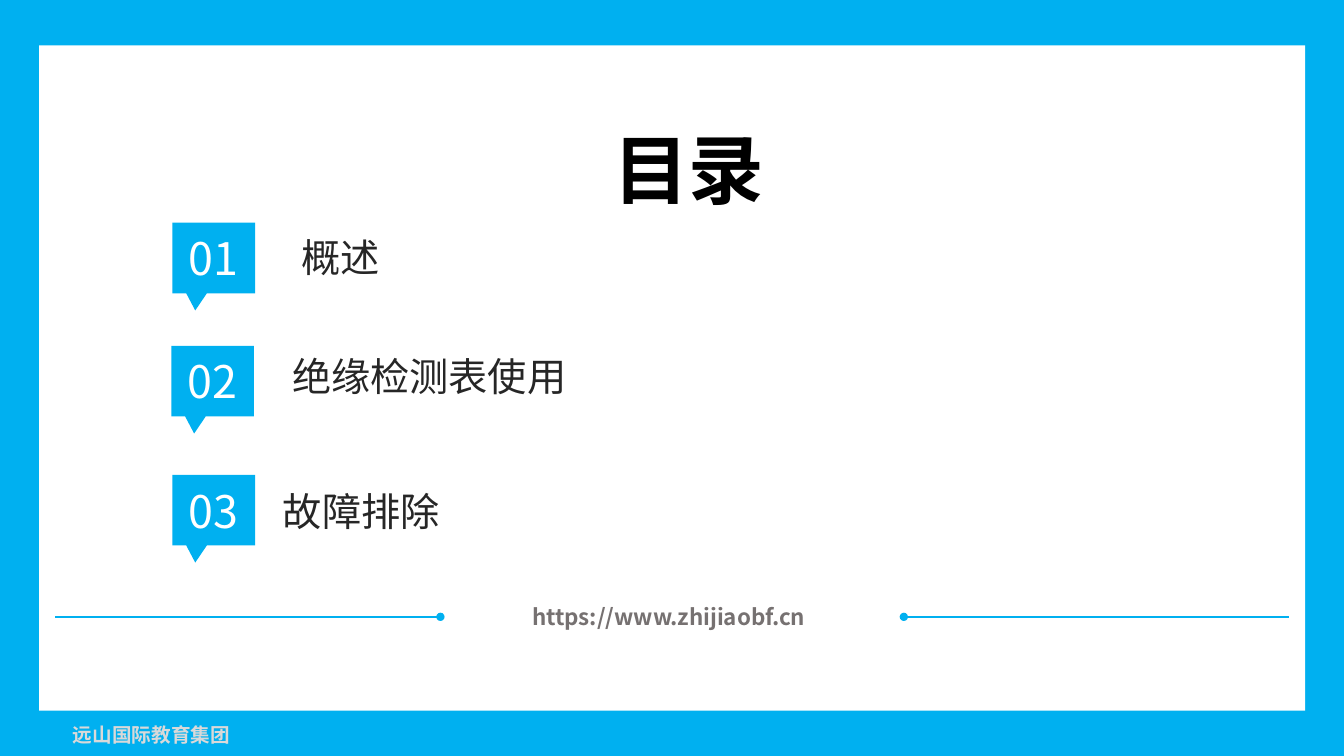
from dataclasses import dataclass

from lxml.etree import SubElement
from pptx import Presentation
from pptx.dml.color import RGBColor
from pptx.enum.shapes import MSO_CONNECTOR, MSO_SHAPE
from pptx.enum.text import MSO_ANCHOR, PP_ALIGN
from pptx.oxml.ns import qn
from pptx.shapes.autoshape import Shape
from pptx.slide import Slide
from pptx.util import Pt

FONT = "Noto Sans CJK SC"
BLUE = "00B0F0"
WHITE = "FFFFFF"


@dataclass
class Box:
    left: float
    top: float
    width: float
    height: float


@dataclass
class TextStyle:
    size: float
    color: str
    bold: bool = False
    align: PP_ALIGN = PP_ALIGN.LEFT
    anchor: MSO_ANCHOR = MSO_ANCHOR.TOP


@dataclass
class Label:
    text: str
    box: Box
    style: TextStyle


@dataclass
class Chapter:
    number: str
    badge: Box
    title: Label


@dataclass
class Rule:
    outer_x: float
    dot_x: float


def rgb(color: str) -> RGBColor:
    return RGBColor.from_string(color)


def write_text(shape: Shape, text: str, style: TextStyle) -> None:
    frame = shape.text_frame
    frame.word_wrap = True
    frame.vertical_anchor = style.anchor
    paragraph = frame.paragraphs[0]
    paragraph.text = text
    paragraph.alignment = style.align
    font = paragraph.font
    font.name = FONT
    font.size = Pt(style.size)
    font.bold = style.bold
    font.color.rgb = rgb(style.color)
    # Chinese characters take the East Asian typeface
    properties = paragraph._p.pPr.find(qn("a:defRPr"))
    SubElement(properties, qn("a:ea"), typeface=FONT)


def add_label(slide: Slide, label: Label) -> None:
    box = label.box
    shape = slide.shapes.add_textbox(
        Pt(box.left), Pt(box.top), Pt(box.width), Pt(box.height))
    write_text(shape, label.text, label.style)


def add_filled_shape(slide: Slide, kind: MSO_SHAPE, box: Box, color: str) -> Shape:
    shape = slide.shapes.add_shape(
        kind, Pt(box.left), Pt(box.top), Pt(box.width), Pt(box.height))
    shape.shadow.inherit = False
    shape.fill.solid()
    shape.fill.fore_color.rgb = rgb(color)
    shape.line.fill.background()
    return shape


def add_chapter(slide: Slide, chapter: Chapter) -> None:
    badge = add_filled_shape(
        slide, MSO_SHAPE.RECTANGULAR_CALLOUT, chapter.badge, BLUE)
    badge.adjustments[0] = -0.224
    badge.adjustments[1] = 0.744
    write_text(badge, chapter.number, NUMBER_STYLE)
    add_label(slide, chapter.title)


def add_rule(slide: Slide, rule: Rule) -> None:
    connector = slide.shapes.add_connector(
        MSO_CONNECTOR.STRAIGHT,
        Pt(rule.outer_x), Pt(RULE_Y), Pt(rule.dot_x), Pt(RULE_Y))
    connector.line.color.rgb = rgb(BLUE)
    connector.line.width = Pt(1)
    SubElement(connector.line._get_or_add_ln(), qn("a:tailEnd"), type="oval")
    SubElement(connector._element.spPr, qn("a:effectLst"))


NUMBER_STYLE = TextStyle(32, WHITE, align=PP_ALIGN.CENTER, anchor=MSO_ANCHOR.MIDDLE)
CHAPTER_STYLE = TextStyle(28, "262626")
PANEL = Box(28, 32.4, 904.3, 475.2)
RULE_Y = 440.6
RULES = [Rule(39.4, 314.6), Rule(920.4, 645.6)]
CHAPTERS = [
    Chapter("01", Box(123.2, 159.1, 59, 50.4),
            Label("概述", Box(208.2, 163.4, 275, 41), CHAPTER_STYLE)),
    Chapter("02", Box(122.4, 247, 59, 50.4),
            Label("绝缘检测表使用", Box(201.6, 248.2, 332.6, 54), CHAPTER_STYLE)),
    Chapter("03", Box(123.2, 339.2, 59, 50.4),
            Label("故障排除", Box(195, 344.2, 322.6, 41), CHAPTER_STYLE)),
]
LABELS = [
    Label("目录", Box(418.3, 84.2, 147.6, 72.7),
          TextStyle(54, "000000", True, PP_ALIGN.CENTER)),
    Label("https://www.zhijiaobf.cn", Box(373, 427, 213.8, 26.6),
          TextStyle(16, "767171", True, PP_ALIGN.JUSTIFY)),
    Label("远山国际教育集团", Box(40.3, 512, 136, 26),
          TextStyle(14, "D9D9D9", True, PP_ALIGN.CENTER, MSO_ANCHOR.MIDDLE)),
]


def main() -> None:
    presentation = Presentation()
    presentation.slide_width = Pt(960)
    presentation.slide_height = Pt(540)
    slide = presentation.slides.add_slide(presentation.slide_layouts[6])

    # Blue frame around a white panel
    slide.background.fill.solid()
    slide.background.fill.fore_color.rgb = rgb(BLUE)
    add_filled_shape(slide, MSO_SHAPE.RECTANGLE, PANEL, WHITE)

    # Contents
    for chapter in CHAPTERS:
        add_chapter(slide, chapter)

    # Rules on both sides of the web address
    for rule in RULES:
        add_rule(slide, rule)

    # Heading, web address and footer
    for label in LABELS:
        add_label(slide, label)

    presentation.save("out.pptx")


if __name__ == "__main__":
    main()
